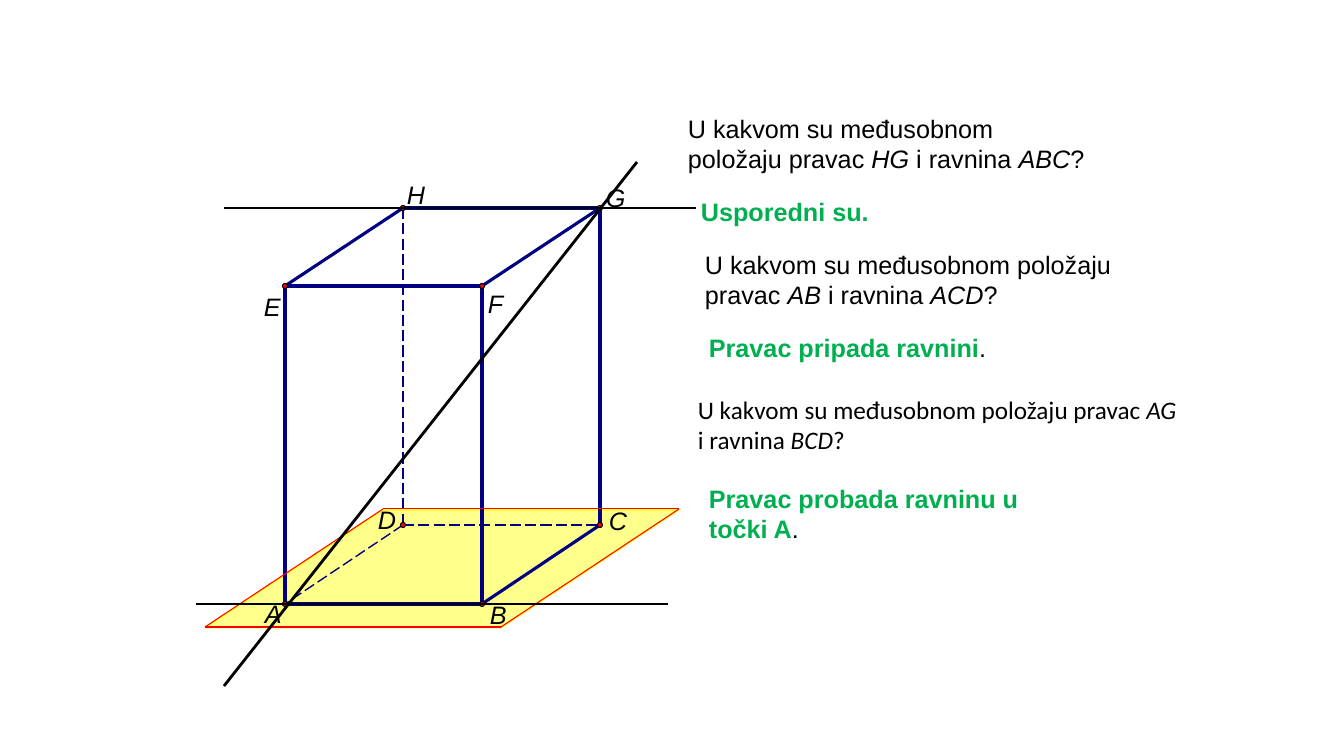
from lxml.etree import SubElement
from pptx import Presentation
from pptx.dml.color import RGBColor
from pptx.enum.dml import MSO_LINE_DASH_STYLE as Dash
from pptx.enum.shapes import MSO_CONNECTOR, MSO_SHAPE
from pptx.enum.text import MSO_AUTO_SIZE
from pptx.oxml.ns import qn
from pptx.util import Emu, Pt

SLIDE_SIZE = (1344, 756)
EMU_PER_PX = 914400 / 100.8

BLACK, NAVY, RED, YELLOW, GREEN = "000000", "000080", "FF0000", "FFFF00", "00B050"

VERTICES = {
    "D": (403, 525), "H": (403, 208), "G": (600, 208), "F": (482, 286),
    "A": (285, 604), "B": (482, 604), "C": (600, 525), "E": (285, 286),
}
LABEL_CORNERS = {
    "D": (378, 504), "H": (407, 179), "G": (606, 182), "F": (488, 288),
    "A": (265, 598), "B": (490, 599), "C": (609, 505), "E": (264, 291),
}
VISIBLE_EDGES = ["AB", "AE", "EF", "FB", "CB", "GF", "GC", "HG", "HE"]
HIDDEN_EDGES = ["DA", "DC", "HD"]
BASE_PLANE = [(205, 628), (501, 628), (679, 510), (383, 510)]
LINES = [  # HG, AB, AG
    ((224, 208), (696, 208)),
    ((196, 604), (668, 604)),
    ((224, 686), (637, 162)),
]
DOT_SIZE = 5

QUESTION = "U kakvom su međusobnom položaju pravac "
# line, plane, font, question box, answer, closing mark, answer box
EXERCISES = [
    ("HG", "ABC", "Arial", (678, 108, 420, 71),
     "Usporedni su.", "", (691, 191, 357, 40)),
    ("AB", "ACD", "Arial", (695, 244, 426, 71),
     "Pravac pripada ravnini", ".", (699, 327, 357, 40)),
    ("AG", "BCD", "Calibri", (688, 389, 504, 71),
     "Pravac probada ravninu u točki A", ".", (699, 478, 357, 71)),
]


def px(value):
    return Emu(round(value * EMU_PER_PX))


def rgb(hex_color):
    return RGBColor.from_string(hex_color)


def draw_line(start, end, color, width, dash=None):
    line = shapes.add_connector(MSO_CONNECTOR.STRAIGHT, *map(px, start + end))
    line.line.color.rgb = rgb(color)
    line.line.width = Pt(width)
    if dash:
        line.line.dash_style = dash
    SubElement(line._element.spPr, qn("a:effectLst"))


def paint(shape, fill, outline):
    shape.shadow.inherit = False
    shape.fill.solid()
    shape.fill.fore_color.rgb = rgb(fill)
    shape.line.color.rgb = rgb(outline)
    shape.line.width = 0


def write(box, runs, font="Arial", wrap=True):
    """Add a text box; runs are (text, font formats) pairs."""
    frame = shapes.add_textbox(*map(px, box)).text_frame
    frame.word_wrap = wrap
    frame.auto_size = MSO_AUTO_SIZE.SHAPE_TO_FIT_TEXT
    for text, formats in runs:
        run = frame.paragraphs[0].add_run()
        run.text = text
        color = formats.get("color", BLACK)
        run.font.color.rgb = rgb(color)
        styles = {"name": font, "size": Pt(18),
                  "bold": formats.get("bold", False),
                  "italic": formats.get("italic", False)}
        for name, value in styles.items():
            setattr(run.font, name, value)
    return frame


def draw_plane():
    corners = [(px(x), px(y)) for x, y in BASE_PLANE]
    builder = shapes.build_freeform(*corners[0])
    builder.add_line_segments(corners[1:], close=True)
    plane = builder.convert_to_shape()
    paint(plane, YELLOW, YELLOW)
    tint = plane._element.spPr.find(qn("a:solidFill"))[0]
    SubElement(tint, qn("a:alpha"), val="45000")


def draw_prism():
    for start, end in VISIBLE_EDGES:
        draw_line(VERTICES[start], VERTICES[end], NAVY, 2.25)
    for start, end in HIDDEN_EDGES:
        draw_line(VERTICES[start], VERTICES[end], NAVY, 1, Dash.LONG_DASH)
    border = [(x, y - 1) for x, y in BASE_PLANE]
    for start, end in zip(border, border[1:] + border[:1]):
        draw_line(start, end, RED, 0.75)


def draw_vertices():
    for letter, (x, y) in VERTICES.items():
        dot_box = (x - DOT_SIZE / 2, y - DOT_SIZE / 2, DOT_SIZE, DOT_SIZE)
        paint(shapes.add_shape(MSO_SHAPE.OVAL, *map(px, dot_box)), RED, BLACK)
        label = write(LABEL_CORNERS[letter] + (18, 30),
                      [(letter, {"italic": True})], wrap=False)
        for side in ("left", "top", "right", "bottom"):
            setattr(label, f"margin_{side}", 0)


def write_exercises():
    italic = {"italic": True}
    for line, plane, font, question_box, answer, mark, answer_box in EXERCISES:
        write(question_box, [(QUESTION, {}), (line, italic), (" i ravnina ", {}),
                             (plane, italic), ("?", {})], font)
        answer_runs = [(answer, {"color": GREEN, "bold": True})]
        if mark:
            answer_runs.append((mark, {}))
        write(answer_box, answer_runs)


deck = Presentation()
deck.slide_width, deck.slide_height = map(px, SLIDE_SIZE)
shapes = deck.slides.add_slide(deck.slide_layouts[6]).shapes

draw_plane()
draw_prism()
draw_vertices()
write_exercises()
for start, end in LINES:
    draw_line(start, end, BLACK, 2)

deck.save("out.pptx")
